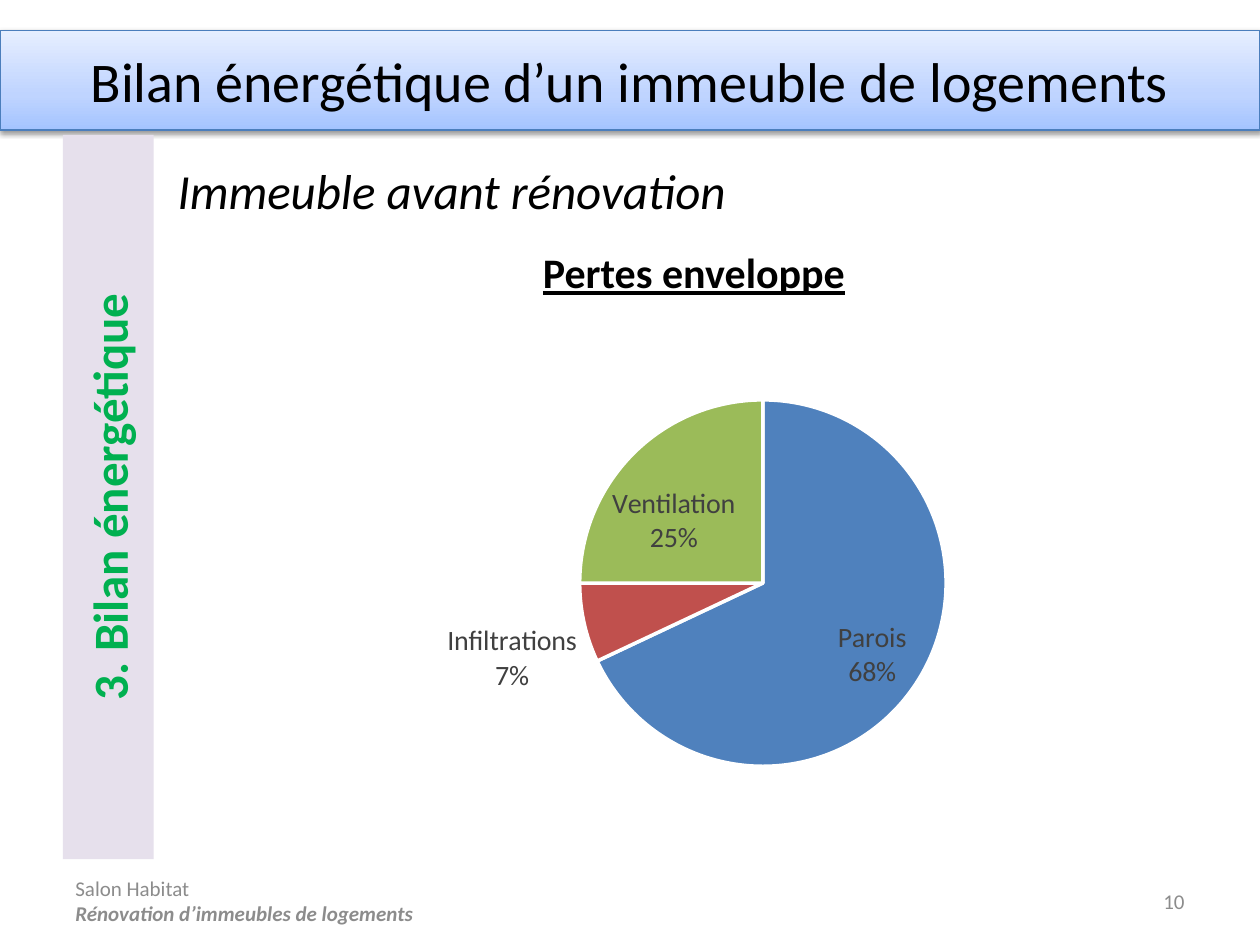
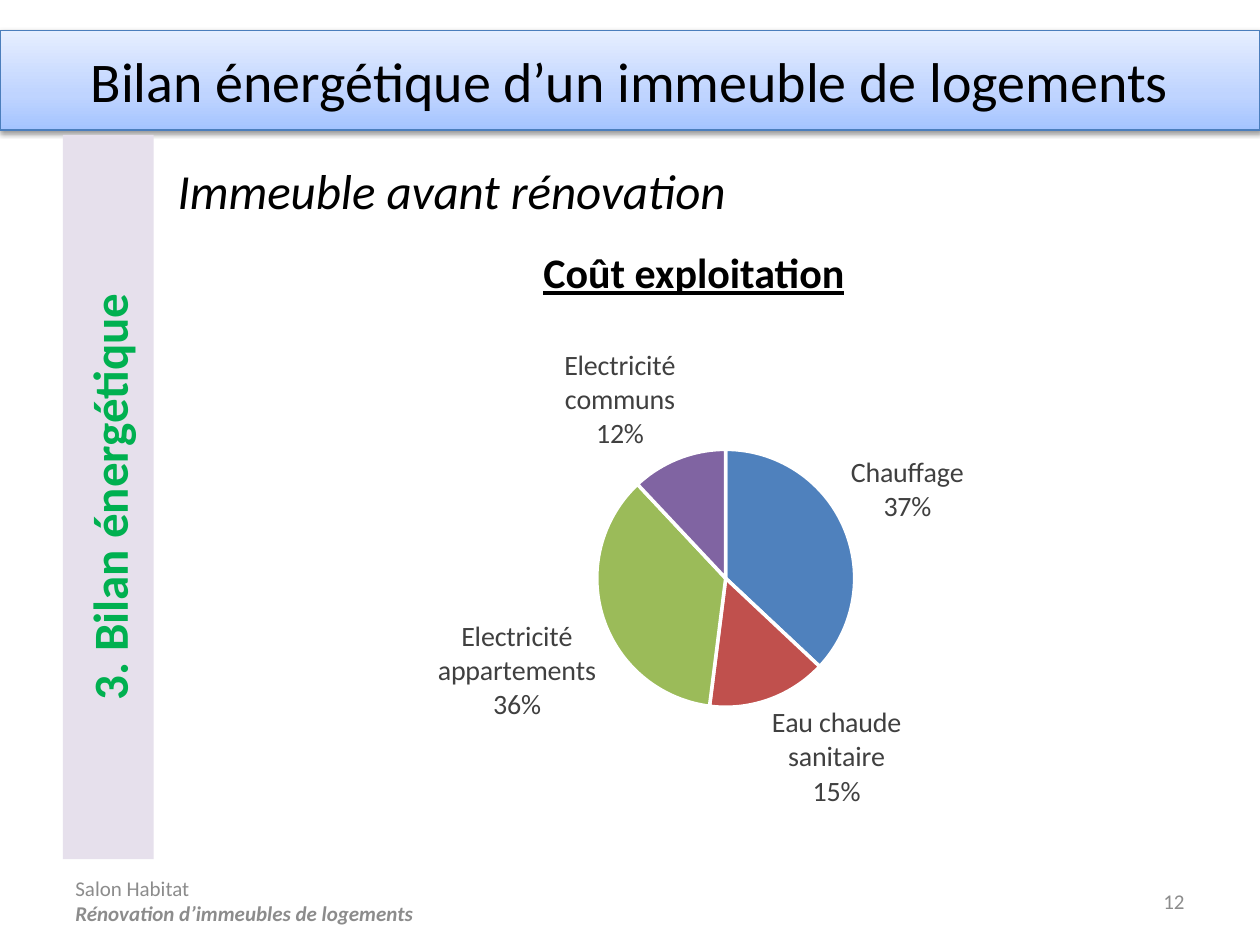
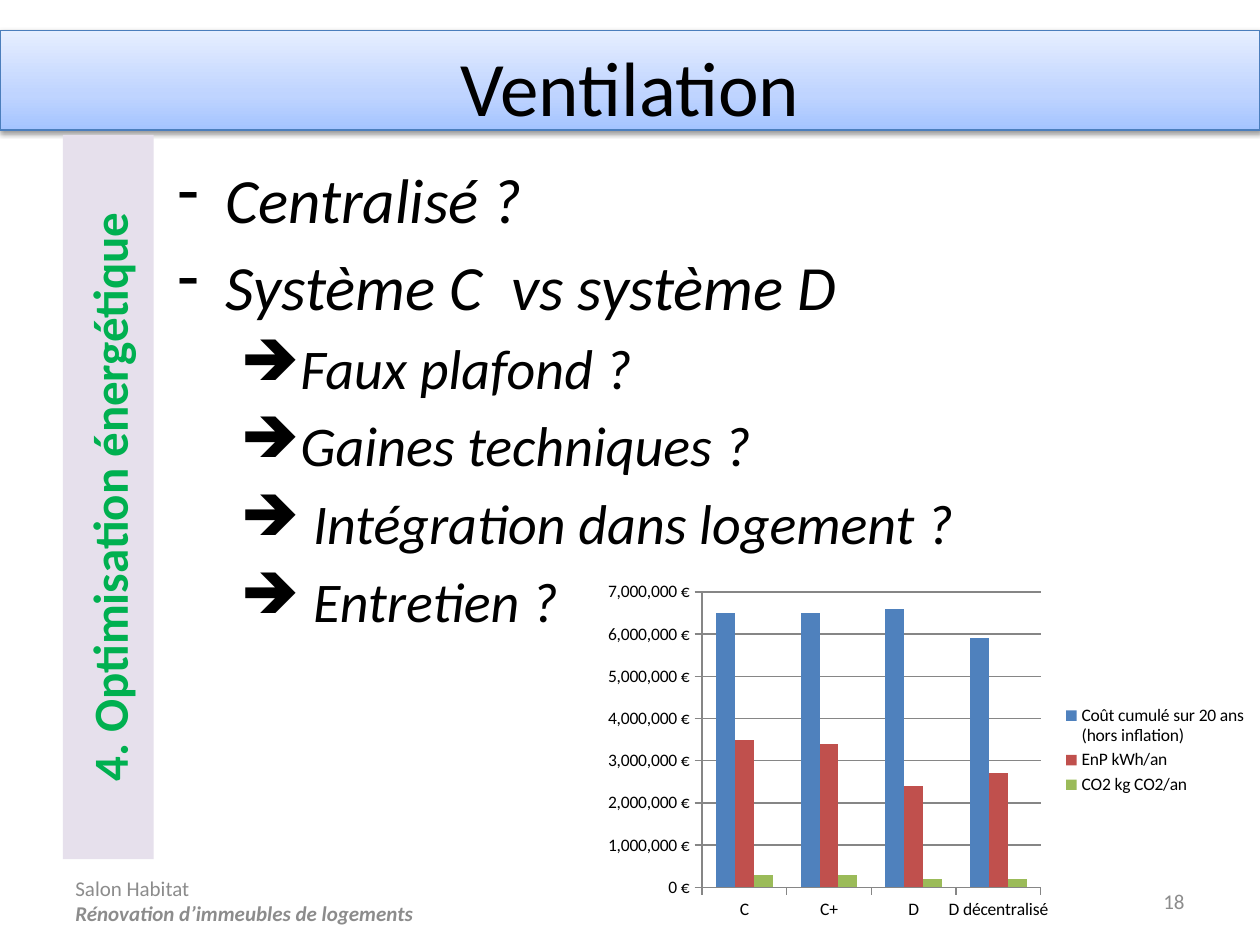
"""Build three slides on the energy balance of an apartment building."""
from pptx import Presentation, util as u
from pptx.chart.data import CategoryChartData
from pptx.dml.color import RGBColor
from pptx.enum import chart as ch, shapes, text
from pptx.oxml import parse_xml
from pptx.oxml.ns import nsdecls

LEFT, CENTER, RIGHT = text.PP_ALIGN.LEFT, text.PP_ALIGN.CENTER, text.PP_ALIGN.RIGHT
TOP, MIDDLE = text.MSO_ANCHOR.TOP, text.MSO_ANCHOR.MIDDLE
BLACK, GREY, GREEN, LABEL = "000000", "8C8C8C", "00B050", "404040"
ACCENTS = ["4F81BD", "C0504D", "9BBB59", "8064A2"]
GRADIENT = [(0, "A4C4FF"), (35, "BFD4FF"), (100, "E6EEFF")]
STOPS = "".join(f'<a:gs pos="{pos * 1000}"><a:srgbClr val="{c}"/></a:gs>' for pos, c in GRADIENT)
BAND_FILL = (f'<a:gradFill {nsdecls("a")} rotWithShape="1"><a:gsLst>{STOPS}</a:gsLst>'
             '<a:lin ang="16200000" scaled="0"/></a:gradFill>')
BAND_SHADOW = (f'<a:effectLst {nsdecls("a")}><a:outerShdw blurRad="40000" dist="20000" '
               'dir="5400000" rotWithShape="0"><a:srgbClr val="000000"><a:alpha val="38000"/>'
               '</a:srgbClr></a:outerShdw></a:effectLst>')
BALANCE = "Bilan énergétique d’un immeuble de logements"
BEFORE = "Immeuble avant rénovation"

SLIDES = [
    dict(number="10", title=BALANCE, title_size=32, title_at=(0, 0.81, 25.4, 1.63),
         section="3. Bilan énergétique", heading="Pertes enveloppe",
         cats=["Parois", "Infiltrations", "Ventilation"],
         series={"Series 1": [68, 7, 25]}, chart_at=(6.3, 6.73, 15.39, 9.14),
         plot=(0.35, 0.14, 0.48, 0.82), labels=ch.XL_LABEL_POSITION.BEST_FIT),
    dict(number="12", title=BALANCE, title_size=32, title_at=(0, 0.81, 25.4, 1.63),
         section="3. Bilan énergétique", heading="Coût exploitation",
         cats=["Chauffage", "Eau chaude sanitaire", "Electricité appartements",
               "Electricité communs"],
         series={"Series 1": [37, 15, 36, 12]}, chart_at=(3.71, 6.58, 20.8, 10.16),
         plot=(0.4, 0.24, 0.25, 0.52), labels=ch.XL_LABEL_POSITION.OUTSIDE_END),
    dict(number="18", title="Ventilation", title_size=44, title_at=(0, 0.66, 25.4, 2.13),
         section="4. Optimisation énergétique", heading=None,
         cats=["C", "C+", "D", "D décentralisé"],
         series={"Coût cumulé sur 20 ans (hors inflation)": [6500000, 6500000, 6600000, 5900000],
                 "EnP kWh/an": [3500000, 3400000, 2400000, 2700000],
                 "CO2 kg CO2/an": [300000, 300000, 200000, 200000]},
         chart_at=(12.01, 11.58, 13.39, 7.09), plot=(0.16, 0.05, 0.51, 0.84), labels=None),
]
QUESTIONS = [(0, "Centralisé ?"), (0, "Système C  vs système D"), (1, "Faux plafond ?"),
             (1, "Gaines techniques ?"), (1, " Intégration dans logement ?"), (1, " Entretien ?")]
LEVELS = [dict(bullet="-", margin=0.97, indent=-0.97, size=36),
          dict(bullet="➔", margin=2.06, indent=-0.79, size=32)]


def style(font, color, **values):
    """Set the font, its colour and any other format values."""
    font.name = "Calibri"
    font.color.rgb = RGBColor.from_string(color)
    for name, value in values.items():
        setattr(font, name, value)


def write(sp, lines, color, align=LEFT, anchor=TOP, **values):
    """Fill a shape with one paragraph per line and return the paragraphs."""
    tf = sp.text_frame
    tf.word_wrap = True
    tf.vertical_anchor = anchor
    tf.text = "\n".join(lines)
    for p in tf.paragraphs:
        p.alignment = align
        style(p.runs[0].font, color, **values)
    return tf.paragraphs


prs = Presentation()
prs.slide_width, prs.slide_height = u.Cm(25.4), u.Cm(19.05)

for d in SLIDES:
    s = prs.slides.add_slide(prs.slide_layouts[5])
    title = s.shapes.title
    for name, value in zip(("left", "top", "width", "height"), d["title_at"]):
        setattr(title, name, u.Cm(value))
    write(title, [d["title"]], BLACK, CENTER, size=u.Pt(d["title_size"]))
    title.text_frame.auto_size = text.MSO_AUTO_SIZE.SHAPE_TO_FIT_TEXT

    band = s.shapes.add_shape(shapes.MSO_SHAPE.RECTANGLE, 0, u.Cm(0.61), u.Cm(25.4), u.Cm(2.01))
    band.line.color.rgb = RGBColor.from_string("4B7EBC")
    band.line.width = u.Pt(0.75)
    band.element.spPr.prstGeom.addnext(parse_xml(BAND_FILL))
    band.element.spPr.append(parse_xml(BAND_SHADOW))
    title.element.addprevious(band.element)

    footer = s.shapes.add_textbox(u.Cm(1.27), u.Cm(17.65), u.Cm(7.62), u.Cm(1.02))
    ps = write(footer, ["Salon Habitat", "Rénovation d’immeubles de logements"], GREY,
               anchor=MIDDLE, size=u.Pt(12))
    style(ps[1].runs[0].font, GREY, bold=True, italic=True)
    number = s.shapes.add_textbox(u.Cm(18.21), u.Cm(17.65), u.Cm(5.92), u.Cm(1.02))
    write(number, [d["number"]], GREY, RIGHT, MIDDLE, size=u.Pt(12))

    side = s.shapes.add_shape(shapes.MSO_SHAPE.RECTANGLE,
                              u.Cm(1.27), u.Cm(2.72), u.Cm(1.83), u.Cm(14.6))
    side.shadow.inherit = False
    side.fill.solid()
    side.fill.fore_color.rgb = RGBColor.from_string("E6E0EC")
    side.line.fill.background()
    write(side, [d["section"]], GREEN, CENTER, MIDDLE, size=u.Pt(28), bold=True)
    side.element.txBody.bodyPr.set("vert", "vert270")

    body = s.shapes.add_textbox(u.Cm(3.33), u.Cm(3.12), u.Cm(21.18),
                                u.Cm(1.3 if d["heading"] else 14.2))
    if d["heading"]:
        write(body, [BEFORE], BLACK, size=u.Pt(28), italic=True)
        heading = s.shapes.add_textbox(u.Cm(3.4), u.Cm(4.85), u.Cm(21.18), u.Cm(1.3))
        write(heading, [d["heading"]], BLACK, CENTER, size=u.Pt(24), bold=True, underline=True)
    else:
        ps = write(body, [line for _, line in QUESTIONS], BLACK, italic=True)
        for i, (p, (level, _)) in enumerate(zip(ps, QUESTIONS)):
            f = LEVELS[level]
            p.level = level
            p.space_before = u.Pt(6 if i else 0)
            pPr = p._p.get_or_add_pPr()
            pPr.set("marL", str(u.Cm(f["margin"])))
            pPr.set("indent", str(u.Cm(f["indent"])))
            pPr.append(parse_xml(f'<a:buChar {nsdecls("a")} char="{f["bullet"]}"/>'))
            p.runs[0].font.size = u.Pt(f["size"])

    data = CategoryChartData()
    data.categories = d["cats"]
    for name, values in d["series"].items():
        data.add_series(name, values)
    kind = ch.XL_CHART_TYPE.PIE if d["labels"] else ch.XL_CHART_TYPE.COLUMN_CLUSTERED
    chart = s.shapes.add_chart(kind, *map(u.Cm, d["chart_at"]), data).chart
    style(chart.font, BLACK, size=u.Pt(10))
    chart.has_title = False
    chart.has_legend = not d["labels"]
    plot = chart.plots[0]

    area = chart.element.chart.plotArea
    for old in area.xpath("c:layout"):
        area.remove(old)
    sizes = "".join(f'<c:{k} val="{v}"/>' for k, v in zip("xywh", d["plot"]))
    area.insert(0, parse_xml(
        f'<c:layout {nsdecls("c")}><c:manualLayout><c:layoutTarget val="inner"/>'
        f'<c:xMode val="edge"/><c:yMode val="edge"/>{sizes}</c:manualLayout></c:layout>'))

    if d["labels"]:
        plot.vary_by_categories = True
        for i in range(len(d["cats"])):
            point = plot.series[0].points[i].format
            point.fill.solid()
            point.fill.fore_color.rgb = RGBColor.from_string(ACCENTS[i])
            point.line.color.rgb = RGBColor.from_string("FFFFFF")
            point.line.width = u.Pt(2)
        plot.has_data_labels = True
        labels = plot.data_labels
        style(labels.font, LABEL, size=u.Pt(16))
        for name, value in dict(show_percentage=True, show_category_name=True, show_value=False,
                                number_format="0%", number_format_is_linked=False,
                                position=d["labels"]).items():
            setattr(labels, name, value)
        for bubble in area.xpath(".//c:showBubbleSize"):
            bubble.addnext(parse_xml(f'<c:separator {nsdecls("c")}>\n</c:separator>'))
    else:
        plot.vary_by_categories = False
        plot.gap_width = 150
        for series, color in zip(plot.series, ACCENTS):
            series.format.fill.solid()
            series.format.fill.fore_color.rgb = RGBColor.from_string(color)
        chart.legend.position = ch.XL_LEGEND_POSITION.RIGHT
        chart.legend.include_in_layout = False
        values = chart.value_axis
        for name, value in dict(minimum_scale=0, maximum_scale=7000000, major_unit=1000000,
                                has_major_gridlines=True).items():
            setattr(values, name, value)
        values.tick_labels.number_format = '#,##0" €"'
        values.tick_labels.number_format_is_linked = False
        for axis in (values, chart.category_axis):
            axis.major_tick_mark = ch.XL_TICK_MARK.OUTSIDE
        for part in (values, chart.category_axis, values.major_gridlines):
            part.format.line.color.rgb = RGBColor.from_string("868686")
            part.format.line.width = u.Pt(0.75)

prs.save("out.pptx")
